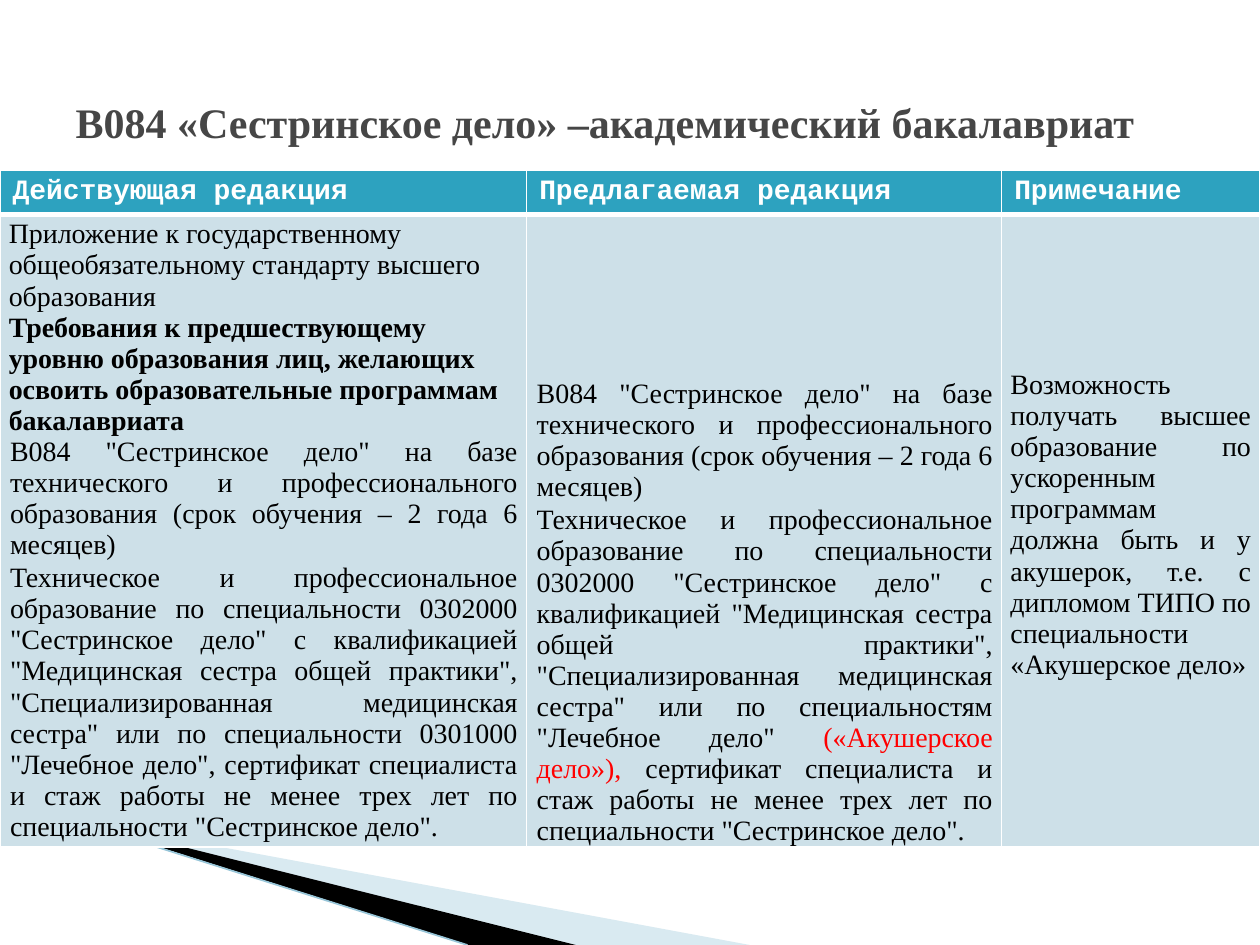
from dataclasses import dataclass

from lxml.etree import SubElement
from pptx import Presentation
from pptx.dml.color import RGBColor
from pptx.enum.shapes import MSO_CONNECTOR
from pptx.enum.text import MSO_ANCHOR, PP_ALIGN
from pptx.oxml.ns import qn
from pptx.util import Inches, Pt


@dataclass(frozen=True)
class Theme:
    title: str = "464646"
    header_fill: str = "2DA2BF"
    body_fill: str = "CDE0E8"
    white: str = "FFFFFF"
    black: str = "000000"
    accent: str = "FF0000"
    wedge: str = "A0CBDC"
    edge: str = "97C5D8"
    serif: str = "Times New Roman"
    mono: str = "Courier New"
    title_size: int = 24
    table_size: int = 16


THEME = Theme()

HEADERS = ["Действующая редакция", "Предлагаемая редакция", "Примечание"]
COLUMN_WIDTHS = [4.18, 3.77, 2.05]
ROW_HEIGHTS = [0.35, 5.02]

PROGRAMME = ('В084 "Сестринское дело" на базе технического и профессионального '
             'образования (срок обучения – 2 года 6 месяцев)')
SPECIALTY = ('Техническое и профессиональное образование по специальности 0302000 '
             '"Сестринское дело" с квалификацией "Медицинская сестра общей практики", '
             '"Специализированная медицинская сестра" или по ')
EXPERIENCE = (' сертификат специалиста и стаж работы не менее трех лет '
              'по специальности "Сестринское дело".')
APPENDIX = "Приложение к государственному общеобязательному стандарту высшего образования"
REQUIREMENTS = ("Требования к предшествующему уровню образования лиц, желающих освоить "
                "образовательные программам бакалавриата")
NOTE = ("Возможность получать высшее образование по ускоренным программам должна быть "
        "и у акушерок, т.е. с дипломом ТИПО по специальности «Акушерское дело»")


def style_run(run, font, size, color, bold=False):
    run.font.name = font
    run.font.size = Pt(size)
    run.font.bold = bold
    run.font.color.rgb = RGBColor.from_string(color)


def add_wedge(slide, points, color, opacity=100):
    corners = [(Inches(x), Inches(y)) for x, y in points]
    builder = slide.shapes.build_freeform(*corners[0])
    builder.add_line_segments(corners[1:], close=True)
    wedge = builder.convert_to_shape()
    wedge.shadow.inherit = False
    wedge.line.fill.background()
    wedge.fill.solid()
    wedge.fill.fore_color.rgb = RGBColor.from_string(color)
    if opacity < 100:
        rgb = wedge._element.spPr.find(".//" + qn("a:srgbClr"))
        SubElement(rgb, qn("a:alpha")).set("val", str(opacity * 1000))


def add_edge(slide, start, end):
    edge = slide.shapes.add_connector(
        MSO_CONNECTOR.STRAIGHT, *(Inches(v) for v in (*start, *end)))
    edge.line.color.rgb = RGBColor.from_string(THEME.edge)
    edge.line.width = Pt(0.95)
    SubElement(edge._element.spPr, qn("a:effectLst"))


def set_title(slide, text):
    title = slide.shapes.title
    title.left, title.top = Inches(0.5), Inches(0.14)
    title.width, title.height = Inches(9), Inches(1.25)
    frame = title.text_frame
    frame.text = text
    frame.vertical_anchor = MSO_ANCHOR.BOTTOM
    frame.margin_bottom = Inches(0.22)
    heading = frame.paragraphs[0]
    heading.alignment = PP_ALIGN.LEFT
    style_run(heading.runs[0], THEME.serif, THEME.title_size, THEME.title, True)


def paint_cell(cell, fill, top=1, bottom=1):
    properties = cell._tc.get_or_add_tcPr()
    for side, width in (("L", 1), ("R", 1), ("T", top), ("B", bottom)):
        border = SubElement(properties, qn(f"a:ln{side}"), w=str(Pt(width)))
        SubElement(SubElement(border, qn("a:solidFill")), qn("a:srgbClr"), val=THEME.white)
    cell.fill.solid()
    cell.fill.fore_color.rgb = RGBColor.from_string(fill)


def fill_header(cell, text):
    paint_cell(cell, THEME.header_fill, bottom=3)
    cell.text_frame.text = text
    style_run(cell.text_frame.paragraphs[0].runs[0],
              THEME.mono, THEME.table_size, THEME.white, True)


def fill_body(cell, paragraphs, anchor, top_margin=0.0):
    """Each paragraph is (justified, indented, [(text, color, bold), ...])."""
    paint_cell(cell, THEME.body_fill, top=3)
    cell.vertical_anchor = anchor
    cell.margin_left = cell.margin_right = Inches(0.07)
    cell.margin_top, cell.margin_bottom = Inches(top_margin), 0
    frame = cell.text_frame
    for index, (justified, indented, parts) in enumerate(paragraphs):
        paragraph = frame.add_paragraph() if index else frame.paragraphs[0]
        paragraph.alignment = PP_ALIGN.JUSTIFY if justified else PP_ALIGN.LEFT
        if indented:
            paragraph._p.get_or_add_pPr().set("marL", str(Inches(0.01)))
            paragraph.space_after = Pt(1)
        for text, color, bold in parts:
            run = paragraph.add_run()
            run.text = text
            style_run(run, THEME.serif, THEME.table_size, color, bold)


def add_comparison(slide):
    table = slide.shapes.add_table(
        len(ROW_HEIGHTS), len(COLUMN_WIDTHS), 0, Inches(1.35),
        Inches(sum(COLUMN_WIDTHS)), Inches(sum(ROW_HEIGHTS))).table
    for column, width in zip(table.columns, COLUMN_WIDTHS):
        column.width = Inches(width)
    for row, height in zip(table.rows, ROW_HEIGHTS):
        row.height = Inches(height)
    for index, header in enumerate(HEADERS):
        fill_header(table.cell(0, index), header)

    black = THEME.black
    programme = (True, True, [(PROGRAMME, black, False)])
    current = [
        (False, False, [(APPENDIX, black, False)]),
        (False, False, [(REQUIREMENTS, black, True)]),
        programme,
        (True, True, [(SPECIALTY + 'специальности 0301000 "Лечебное дело",' + EXPERIENCE,
                       black, False)]),
    ]
    proposed = [
        programme,
        (True, True, [(SPECIALTY + 'специальностям "Лечебное дело" ', black, False),
                      ("(«Акушерское дело»),", THEME.accent, False),
                      (EXPERIENCE, black, False)]),
    ]
    note = [(True, False, [(NOTE, black, False)])]
    fill_body(table.cell(1, 0), current, MSO_ANCHOR.MIDDLE)
    fill_body(table.cell(1, 1), proposed, MSO_ANCHOR.BOTTOM)
    fill_body(table.cell(1, 2), note, MSO_ANCHOR.TOP, top_margin=1.23)


def main():
    presentation = Presentation()
    presentation.slide_width, presentation.slide_height = Inches(10), Inches(7.5)
    slide = presentation.slides.add_slide(presentation.slide_layouts[5])

    # Corner decoration, partly behind the table
    add_wedge(slide, [(0.55, 6.5), (5.95, 7.5), (4.56, 7.5)], THEME.wedge, opacity=40)
    add_wedge(slide, [(0.53, 6.49), (4.57, 7.5), (3.72, 7.5)], THEME.black)
    add_edge(slide, (0, 6.33), (3.71, 7.5))

    # Heading and comparison of the two wordings
    set_title(slide, "В084 «Сестринское дело» –академический бакалавриат")
    add_comparison(slide)

    presentation.save("out.pptx")


if __name__ == "__main__":
    main()
